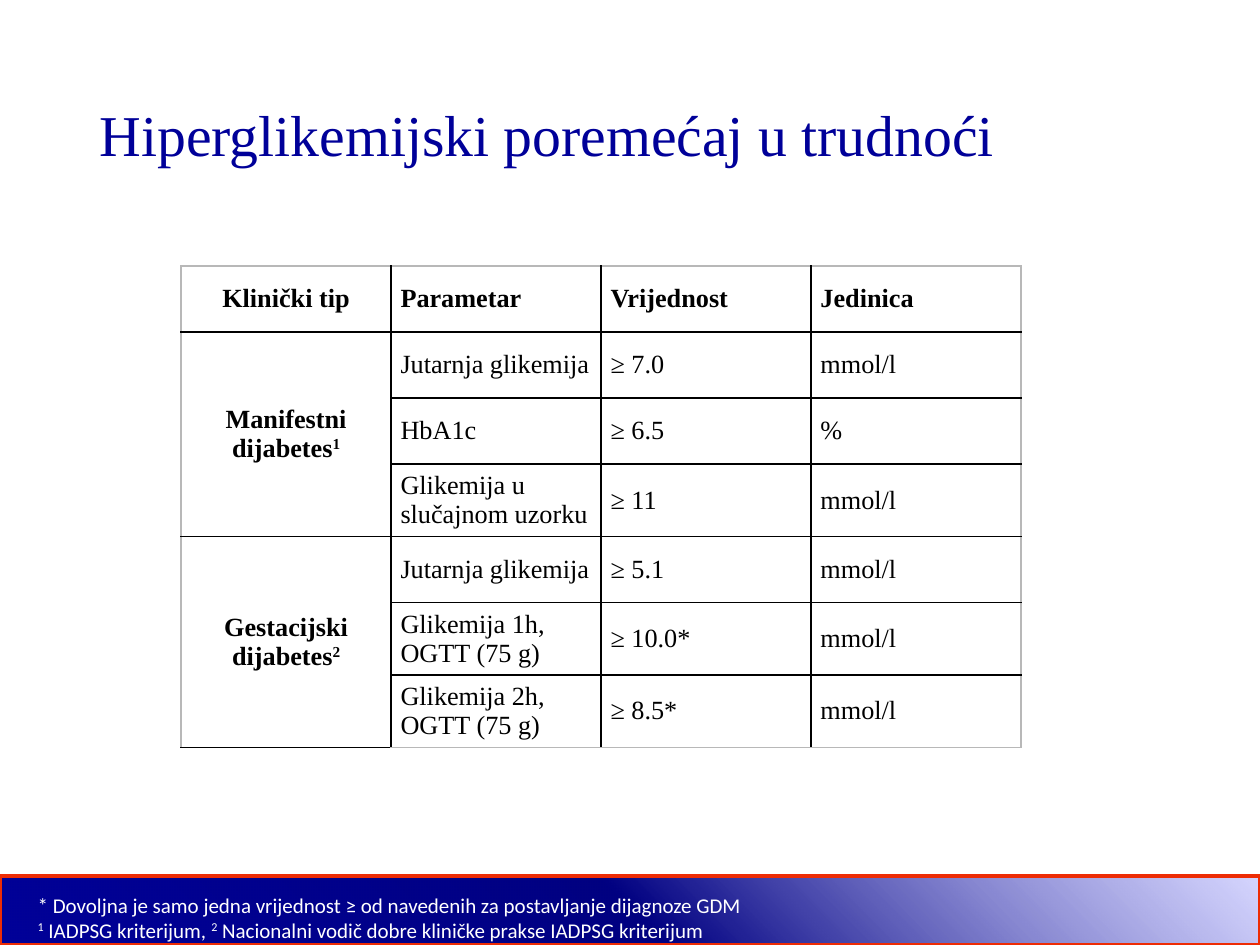
from dataclasses import dataclass
from lxml.etree import SubElement
from pptx import Presentation
from pptx.dml.color import RGBColor
from pptx.enum.shapes import MSO_SHAPE as Shape
from pptx.enum.text import MSO_ANCHOR as Anchor, MSO_AUTO_SIZE as AutoSize, PP_ALIGN as Align
from pptx.oxml import parse_xml
from pptx.oxml.ns import nsdecls, qn
from pptx.util import Pt


@dataclass(frozen=True)
class Theme:
    serif: str = "Times New Roman"
    sans: str = "Calibri"
    title_size: int = 33
    table_size: int = 15
    note_size: int = 12
    title: str = "000099"
    text: str = "000000"
    white: str = "FFFFFF"
    frame: str = "B8B8B8"
    band_line: str = "ED2C05"
    band_light: str = "C4C4FF"
    band_middle: str = "000081"
    band_dark: str = "000099"


THEME = Theme()
COLUMN_WIDTH = 120
ROW_HEIGHT, TALL_ROW_HEIGHT = 37.75, 41.4
TALL_ROWS = (3, 5, 6)
GROUP_ROWS = (1, 4)
GROUP_SIZE = 3
ROWS = [
    ("Klinički tip", "Parametar", "Vrijednost", "Jedinica"),
    ("Manifestni dijabetes^1", "Jutarnja glikemija", "≥ 7.0", "mmol/l"),
    ("", "HbA1c", "≥ 6.5", "%"),
    ("", "Glikemija u slučajnom uzorku", "≥ 11", "mmol/l"),
    ("Gestacijski dijabetes^2", "Jutarnja glikemija", "≥ 5.1", "mmol/l"),
    ("", "Glikemija 1h, OGTT (75 g)", "≥ 10.0*", "mmol/l"),
    ("", "Glikemija 2h, OGTT (75 g)", "≥ 8.5*", "mmol/l"),
]
NOTES = [
    "* Dovoljna je samo jedna vrijednost ≥ od navedenih za postavljanje dijagnoze GDM",
    "^1^ IADPSG kriterijum, ^2^ Nacionalni vodič dobre kliničke prakse IADPSG kriterijum",
]


def write(para, text, face, size, color, bold=False, align=Align.LEFT):
    para.alignment = align
    font = para.font
    font.name, font.size, font.bold = face, Pt(size), bold
    font.color.rgb = RGBColor.from_string(color)
    for index, part in enumerate(text.split("^")):
        if part:
            span = para.add_run()
            span.text = part
            if index % 2:
                span.font._element.set("baseline", "30000")


def add_band(page):
    band = page.shapes.add_shape(Shape.RECTANGLE, Pt(0), Pt(500.4), Pt(720), Pt(39.6))
    band.shadow.inherit = False
    band.line.color.rgb = RGBColor.from_string(THEME.band_line)
    band.line.width = Pt(2.25)
    gradient = parse_xml(
        f'<a:gradFill {nsdecls("a")} rotWithShape="1"><a:gsLst>'
        f'<a:gs pos="0"><a:srgbClr val="{THEME.band_light}"><a:alpha val="68000"/></a:srgbClr></a:gs>'
        f'<a:gs pos="50000"><a:srgbClr val="{THEME.band_middle}"/></a:gs>'
        f'<a:gs pos="100000"><a:srgbClr val="{THEME.band_dark}"/></a:gs>'
        '</a:gsLst><a:lin ang="8100000" scaled="0"/></a:gradFill>')
    band._element.spPr.find(qn("a:prstGeom")).addnext(gradient)


def add_title(page, text):
    box = page.shapes.title
    box.left, box.top, box.width, box.height = Pt(49.7), Pt(26.6), Pt(620.6), Pt(104.4)
    frame = box.text_frame
    frame.vertical_anchor = Anchor.MIDDLE
    para = frame.paragraphs[0]
    para.line_spacing = 0.9
    write(para, text, THEME.serif, THEME.title_size, THEME.title)


def set_borders(cell, outer_sides):
    properties = cell._tc.get_or_add_tcPr()
    for side in "LRTB":
        line = SubElement(properties, qn(f"a:ln{side}"), w=str(Pt(1)))
        fill = SubElement(line, qn("a:solidFill"))
        color = THEME.frame if side in outer_sides else THEME.text
        SubElement(fill, qn("a:srgbClr"), val=color)


def add_criteria_table(page):
    last_row, last_column = len(ROWS) - 1, len(ROWS[0]) - 1
    heights = [TALL_ROW_HEIGHT if r in TALL_ROWS else ROW_HEIGHT for r in range(len(ROWS))]
    table = page.shapes.add_table(
        len(ROWS), len(ROWS[0]), Pt(103.5), Pt(152),
        Pt(COLUMN_WIDTH * len(ROWS[0])), Pt(sum(heights))).table
    table.first_row = table.horz_banding = False
    for column in table.columns:
        column.width = Pt(COLUMN_WIDTH)
    for r, (values, height) in enumerate(zip(ROWS, heights)):
        table.rows[r].height = Pt(height)
        for c, text in enumerate(values):
            cell = table.cell(r, c)
            edges = {"L": c == 0, "R": c == last_column, "T": r == 0, "B": r == last_row}
            set_borders(cell, [side for side, outer in edges.items() if outer])
            cell.fill.background()
            cell.vertical_anchor = Anchor.MIDDLE
            cell.margin_left = cell.margin_right = Pt(5.4)
            cell.margin_top = cell.margin_bottom = Pt(2.7)
            write(cell.text_frame.paragraphs[0], text, THEME.serif, THEME.table_size,
                  THEME.text, r == 0 or c == 0, Align.LEFT if c else Align.CENTER)
    for r in GROUP_ROWS:
        table.cell(r, 0).merge(table.cell(r + GROUP_SIZE - 1, 0))


def add_notes(page, lines):
    box = page.shapes.add_textbox(Pt(14.4), Pt(506.2), Pt(617.8), Pt(36))
    frame = box.text_frame
    frame.word_wrap = True
    frame.auto_size = AutoSize.SHAPE_TO_FIT_TEXT
    for index, text in enumerate(lines):
        para = frame.add_paragraph() if index else frame.paragraphs[0]
        write(para, text, THEME.sans, THEME.note_size, THEME.white)


def main():
    deck = Presentation()
    deck.slide_width, deck.slide_height = Pt(720), Pt(540)
    page = deck.slides.add_slide(deck.slide_layouts[5])
    add_band(page)
    add_title(page, "Hiperglikemijski poremećaj u trudnoći")
    add_criteria_table(page)
    add_notes(page, NOTES)
    deck.save("out.pptx")


if __name__ == "__main__":
    main()
